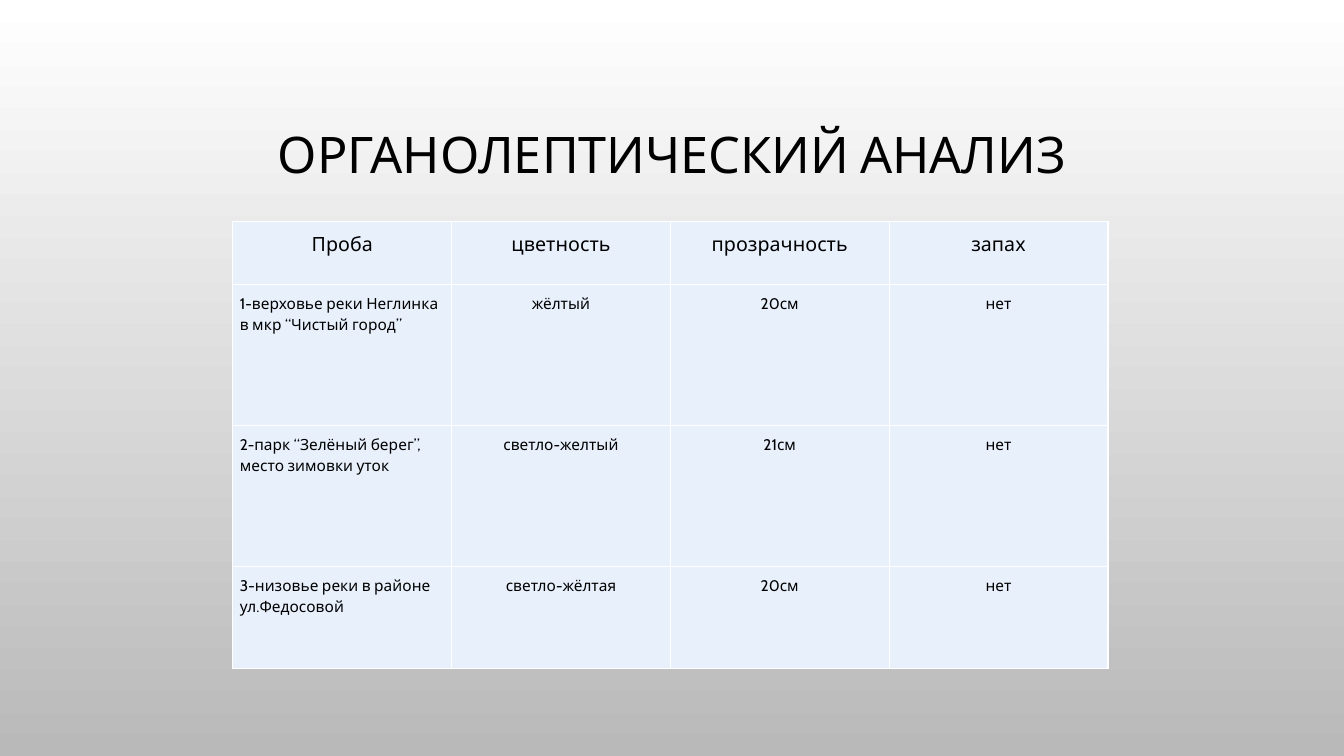
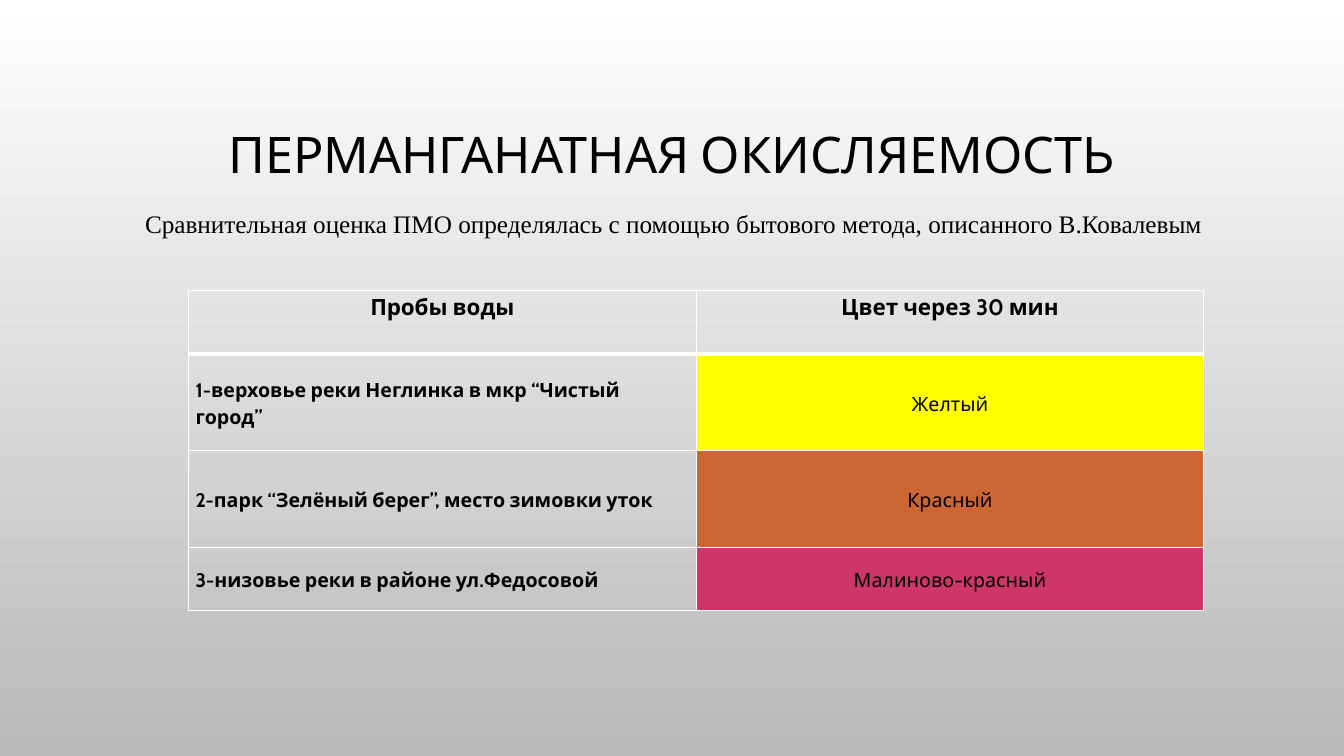
"""Build two slides on water sample analysis."""
from lxml import etree
from pptx import Presentation
from pptx.dml.color import RGBColor
from pptx.enum.text import MSO_ANCHOR, PP_ALIGN
from pptx.oxml.ns import qn
from pptx.util import Inches, Pt

LEFT, CENTER = PP_ALIGN.LEFT, PP_ALIGN.CENTER
TOP, MIDDLE = MSO_ANCHOR.TOP, MSO_ANCHOR.MIDDLE
WIDTH, HEIGHT = 13.33, 7.5
FONT, SERIF = "Cabin", "Times New Roman"
BLACK, WHITE, GRAY, PALE = "000000", "FFFFFF", "B9B9B9", "E8F0FC"
THIN, THICK = 1, 3

SITES = [
    "1-верховье реки Неглинка в мкр “Чистый город”",
    "2-парк “Зелёный берег”, место зимовки уток",
    "3-низовье реки в районе ул.Федосовой",
]
SENSORY_TITLE = "ОРГАНОЛЕПТИЧЕСКИЙ АНАЛИЗ"
SENSORY_HEADER = ["Проба", "цветность", "прозрачность", "запах"]
SENSORY = [
    ("жёлтый", "20см", "нет"),
    ("светло-желтый", "21см", "нет"),
    ("светло-жёлтая", "20см", "нет"),
]
OXIDATION_TITLE = "ПЕРМАНГАНАТНАЯ ОКИСЛЯЕМОСТЬ"
OXIDATION_NOTE = ("Сравнительная оценка ПМО определялась с помощью бытового метода, "
                  "описанного В.Ковалевым")
OXIDATION_HEADER = ["Пробы воды", "Цвет через 30 мин"]
OXIDATION = [("Желтый", "FFFF00"), ("Красный", "CE6633"), ("Малиново-красный", "CD356B")]


def color(value):
    return RGBColor.from_string(value)


def write(frame, text, size, font=FONT, bold=False, align=LEFT, spacing=1.0):
    para = frame.paragraphs[0]
    para.alignment = align
    para.line_spacing = spacing
    span = para.add_run()
    span.text = text
    span.font.name = font
    span.font.size = Pt(size)
    span.font.bold = bold
    span.font.color.rgb = color(BLACK)


def add_text(page, text, place, size, anchor=TOP, **style):
    box = page.shapes.add_textbox(*map(Inches, place))
    box.text_frame.word_wrap = True
    box.text_frame.vertical_anchor = anchor
    write(box.text_frame, text, size, **style)


def add_page(deck, title):
    page = deck.slides.add_slide(deck.slide_layouts[6])
    fill = page.background.fill
    fill.gradient()
    fill.gradient_angle = 270
    for stop, shade in zip(fill.gradient_stops, (WHITE, GRAY)):
        stop.color.rgb = color(shade)
    add_text(page, title, (1, 0.68, WIDTH - 2, 1.75), 36, MIDDLE, align=CENTER, spacing=0.9)
    return page


def set_borders(cell, **widths):
    properties = cell._tc.get_or_add_tcPr()
    for side in "LRTB":
        width = Pt(widths.get(side, THIN))
        line = etree.SubElement(properties, qn(f"a:ln{side}"), w=str(width))
        solid = etree.SubElement(line, qn("a:solidFill"))
        etree.SubElement(solid, qn("a:srgbClr"), val=WHITE)


def add_grid(page, place, heights, columns):
    left, top, width = place
    table = page.shapes.add_table(len(heights), columns, Inches(left), Inches(top),
                                  Inches(width), Inches(sum(heights))).table
    table.first_row = table.horz_banding = False
    for column in table.columns:
        column.width = Inches(width / columns)
    for row, height in zip(table.rows, heights):
        row.height = Inches(height)
    return table


def fill_cell(cell, text, size, fill=None, anchor=TOP, padding=0.0, borders=None, **style):
    cell.margin_left = cell.margin_right = Inches(0.07)
    cell.margin_top = cell.margin_bottom = Inches(padding)
    cell.vertical_anchor = anchor
    set_borders(cell, **(borders or {}))
    if fill:
        cell.fill.solid()
        cell.fill.fore_color.rgb = color(fill)
    else:
        cell.fill.background()
    write(cell.text_frame, text, size, spacing=1.15, **style)


def add_sensory(deck):
    page = add_page(deck, SENSORY_TITLE)
    rows = [SENSORY_HEADER] + [(site, *values) for site, values in zip(SITES, SENSORY)]
    table = add_grid(page, (2.31, 2.2, 8.68), [0.62, 1.4, 1.4, 1.01], len(SENSORY_HEADER))
    for r, row in enumerate(rows):
        for c, text in enumerate(row):
            fill_cell(table.cell(r, c), text, 11 if r else 14, PALE, padding=0.07,
                      align=LEFT if r and c == 0 else CENTER)


def add_oxidation(deck):
    page = add_page(deck, OXIDATION_TITLE)
    table = add_grid(page, (1.87, 2.88, 10.07), [0.63, 0.96, 0.96, 0.63], len(OXIDATION_HEADER))
    for c, text in enumerate(OXIDATION_HEADER):
        fill_cell(table.cell(0, c), text, 16, bold=True, align=CENTER, borders={"B": THICK})
    for r, (site, (name, shade)) in enumerate(zip(SITES, OXIDATION), 1):
        borders = {"T": THICK if r == 1 else THIN}
        fill_cell(table.cell(r, 0), site, 14, anchor=MIDDLE, bold=True, borders=borders)
        fill_cell(table.cell(r, 1), name, 14, shade, MIDDLE, align=CENTER, borders=borders)
    add_text(page, OXIDATION_NOTE, (1.34, 2.02, 11.44, 0.4), 18, font=SERIF)


def main():
    deck = Presentation()
    deck.slide_width, deck.slide_height = Inches(WIDTH), Inches(HEIGHT)
    add_sensory(deck)
    add_oxidation(deck)
    deck.save("out.pptx")


if __name__ == "__main__":
    main()
